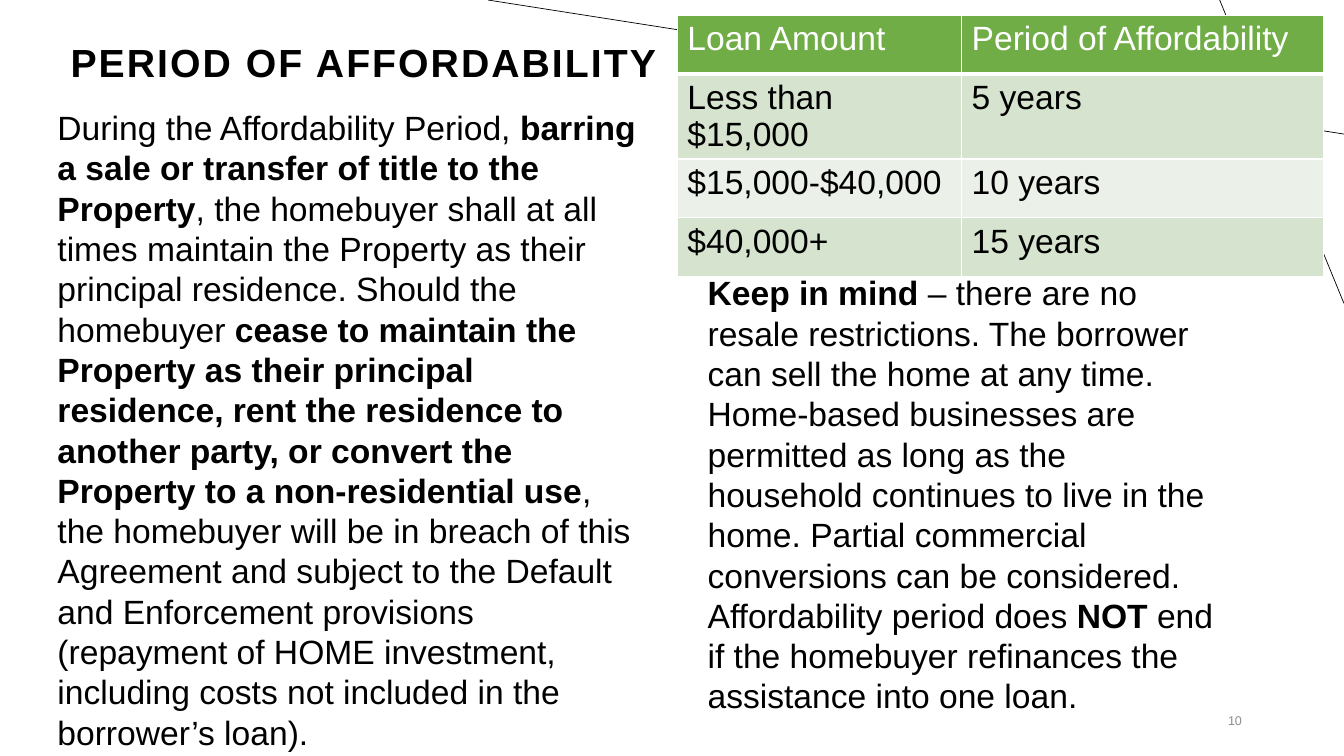
from dataclasses import dataclass

import pptx
import pptx.dml.color
import pptx.enum.shapes
import pptx.enum.text
import pptx.oxml
import pptx.oxml.ns
import pptx.util
from pptx.util import Pt

BLACK = pptx.dml.color.RGBColor(0x00, 0x00, 0x00)
WHITE = pptx.dml.color.RGBColor(0xFF, 0xFF, 0xFF)
GRAY = pptx.dml.color.RGBColor(0x8C, 0x8C, 0x8C)
HEADER_GREEN = pptx.dml.color.RGBColor(0x70, 0xAD, 0x47)
BAND_GREEN = pptx.dml.color.RGBColor(0xD5, 0xE3, 0xCF)
PALE_GREEN = pptx.dml.color.RGBColor(0xEB, 0xF1, 0xE9)
FONT = "Arial"
NAMESPACE = pptx.oxml.ns.nsdecls("a")


@dataclass(frozen=True)
class Box:
    left: float
    top: float
    width: float
    height: float

    def lengths(self) -> tuple:
        return Pt(self.left), Pt(self.top), Pt(self.width), Pt(self.height)


@dataclass(frozen=True)
class TextRun:
    text: str
    bold: bool = False


@dataclass(frozen=True)
class Passage:
    box: Box
    runs: tuple[TextRun, ...]


@dataclass(frozen=True)
class Line:
    start: tuple[float, float]
    end: tuple[float, float]


LINES = (
    Line((960, 95.76), (348.48, 0)),
    Line((871.2, 0), (960, 216.72)),
)
PASSAGES = (
    Passage(Box(33.84, 72.72, 427.68, 443.52), (
        TextRun("During the Affordability Period, "),
        TextRun("barring a sale or transfer of title to the Property", True),
        TextRun(", the homebuyer shall at all times maintain the Property as their "
                "principal residence. Should the homebuyer "),
        TextRun("cease to maintain the Property as their principal residence, rent the "
                "residence to another party, or convert the Property to a "
                "non-residential use", True),
        TextRun(", the homebuyer will be in breach of this Agreement and subject to the "
                "Default and Enforcement provisions (repayment of HOME investment, "
                "including costs not included in the borrower’s loan)."),
    )),
    Passage(Box(498.24, 190.8, 387.36, 298.08), (
        TextRun("Keep in mind ", True),
        TextRun("– there are no resale restrictions. The borrower can sell the home at "
                "any time. Home-based businesses are permitted as long as the household "
                "continues to live in the home. Partial commercial conversions can be "
                "considered. Affordability period does "),
        TextRun("NOT", True),
        TextRun(" end if the homebuyer refinances the assistance into one loan."),
    )),
)
LOAN_ROWS = (
    ("Loan Amount", "Period of Affordability"),
    ("Less than $15,000", "5 years"),
    ("$15,000-$40,000", "10 years"),
    ("$40,000+", "15 years"),
)
COLUMN_WIDTHS = (203.04, 258.48)
ROW_HEIGHT = 42


def place(shape, box: Box) -> None:
    shape.left, shape.top, shape.width, shape.height = box.lengths()


def add_run(paragraph, text_run: TextRun, size: float, color):
    run = paragraph.add_run()
    run.text = text_run.text
    run.font.name = FONT
    run.font.size = Pt(size)
    run.font.bold = text_run.bold
    run.font.color.rgb = color
    return run


def prepare_frame(shape, anchor) -> None:
    frame = shape.text_frame
    frame.word_wrap = True
    frame.auto_size = pptx.enum.text.MSO_AUTO_SIZE.NONE
    frame.vertical_anchor = anchor


def fill_title(title) -> None:
    place(title, Box(43.2, 10.8, 784.08, 54))
    prepare_frame(title, pptx.enum.text.MSO_ANCHOR.BOTTOM)
    paragraph = title.text_frame.paragraphs[0]
    paragraph.alignment = pptx.enum.text.PP_ALIGN.LEFT
    paragraph.line_spacing = 0.9
    run = add_run(paragraph, TextRun("PERIOD OF AFFORDABILITY", True), 28, BLACK)
    run.font._element.set("spc", "150")


def fill_passage(body, passage: Passage) -> None:
    place(body, passage.box)
    prepare_frame(body, pptx.enum.text.MSO_ANCHOR.TOP)
    paragraph = body.text_frame.paragraphs[0]
    paragraph.alignment = pptx.enum.text.PP_ALIGN.LEFT
    paragraph.space_before = Pt(0)
    paragraph.line_spacing = 1.0
    # Plain paragraph without bullet or indent
    properties = paragraph._p.get_or_add_pPr()
    properties.set("marL", "0")
    properties.set("indent", "0")
    properties.append(pptx.oxml.parse_xml(f"<a:buNone {NAMESPACE}/>"))
    for text_run in passage.runs:
        add_run(paragraph, text_run, 24, BLACK)


def add_line(slide, line: Line) -> None:
    connector = slide.shapes.add_connector(
        pptx.enum.shapes.MSO_CONNECTOR.STRAIGHT,
        *(Pt(value) for value in line.start + line.end))
    connector.line.color.rgb = BLACK
    connector.line.width = Pt(0.5)
    connector._element.spPr.append(pptx.oxml.parse_xml(f"<a:effectLst {NAMESPACE}/>"))


def set_borders(cell, top: float, bottom: float) -> None:
    properties = cell._tc.get_or_add_tcPr()
    for side, width in (("L", 1), ("R", 1), ("T", top), ("B", bottom)):
        properties.append(pptx.oxml.parse_xml(
            f'<a:ln{side} {NAMESPACE} w="{Pt(width)}"><a:solidFill>'
            f'<a:srgbClr val="{WHITE}"/></a:solidFill></a:ln{side}>'))


def add_loan_table(slide) -> None:
    box = Box(483.84, 10.8, sum(COLUMN_WIDTHS), ROW_HEIGHT * len(LOAN_ROWS))
    table = slide.shapes.add_table(
        len(LOAN_ROWS), len(COLUMN_WIDTHS), *box.lengths()).table
    for column, width in zip(table.columns, COLUMN_WIDTHS):
        column.width = Pt(width)
    for row_index, texts in enumerate(LOAN_ROWS):
        is_header = row_index == 0
        band = BAND_GREEN if row_index % 2 else PALE_GREEN
        for column_index, text in enumerate(texts):
            cell = table.cell(row_index, column_index)
            set_borders(cell, 3 if row_index == 1 else 1, 3 if is_header else 1)
            cell.fill.solid()
            cell.fill.fore_color.rgb = HEADER_GREEN if is_header else band
            add_run(cell.text_frame.paragraphs[0], TextRun(text), 24,
                    WHITE if is_header else BLACK)


def add_page_number(slide) -> None:
    text_box = slide.shapes.add_textbox(*Box(816.48, 500.4, 77.76, 28.8).lengths())
    prepare_frame(text_box, pptx.enum.text.MSO_ANCHOR.MIDDLE)
    paragraph = text_box.text_frame.paragraphs[0]
    paragraph.alignment = pptx.enum.text.PP_ALIGN.RIGHT
    add_run(paragraph, TextRun("10"), 9, GRAY)


def main() -> None:
    presentation = pptx.Presentation()
    presentation.slide_width, presentation.slide_height = Pt(960), Pt(540)
    # Layout with a title and two bodies
    slide = presentation.slides.add_slide(presentation.slide_layouts[3])
    slide.background.fill.solid()
    slide.background.fill.fore_color.rgb = WHITE

    # Title and the two passages
    fill_title(slide.shapes.title)
    for index, passage in enumerate(PASSAGES, start=1):
        fill_passage(slide.placeholders[index], passage)

    # Corner lines, with the table over them
    for line in LINES:
        add_line(slide, line)
    add_loan_table(slide)
    add_page_number(slide)
    presentation.save("out.pptx")


if __name__ == "__main__":
    main()
